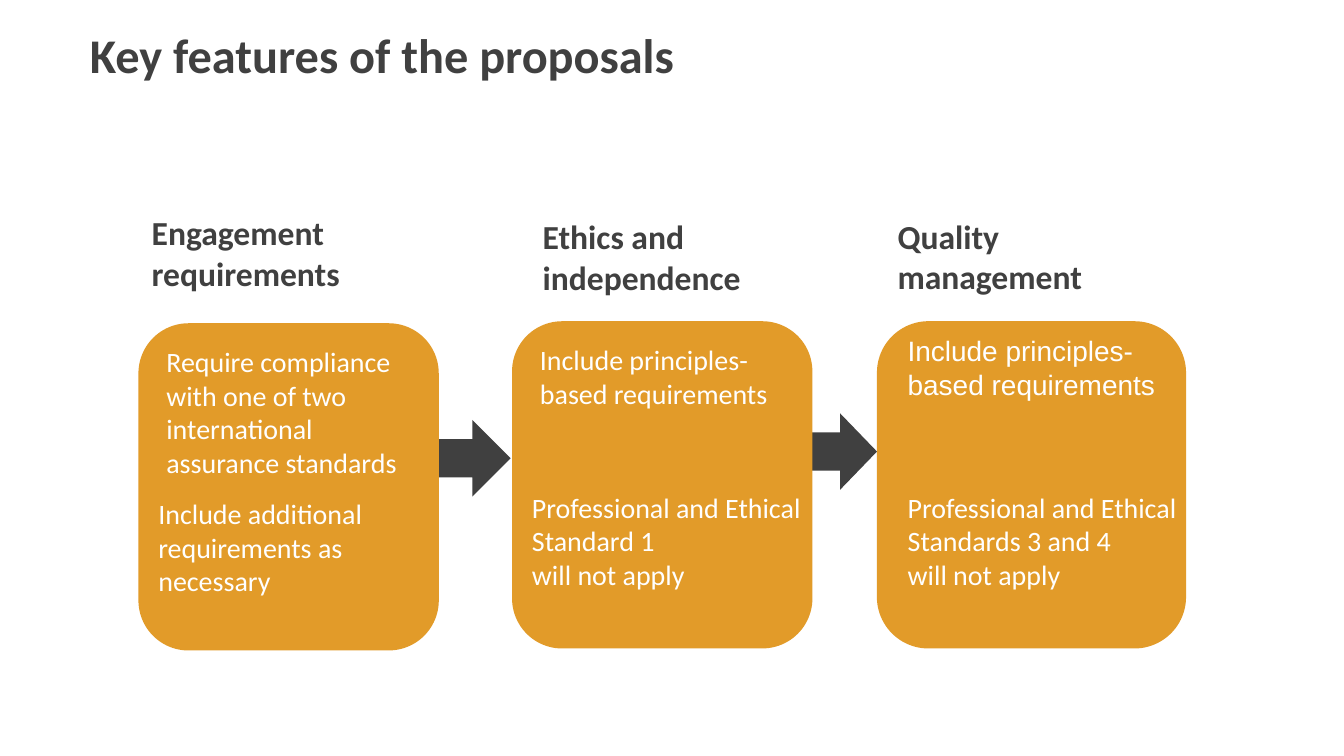
from pptx import Presentation
from pptx.dml.color import RGBColor
from pptx.enum.shapes import MSO_SHAPE as Shape
from pptx.enum.text import MSO_ANCHOR as Anchor, PP_ALIGN as Align
from pptx.util import Emu, Pt

PX = 4572
ORANGE, DARK, WHITE = "E29B29", "404040", "FFFFFF"


def px(*values):
    return [Emu(v * PX) for v in values]


def color(hex_code):
    return RGBColor.from_string(hex_code)


def add_block(slide, kind, box, fill):
    sp = slide.shapes.add_shape(kind, *px(*box))
    sp.shadow.inherit = False
    sp.fill.solid()
    sp.fill.fore_color.rgb = color(fill)
    sp.line.fill.background()
    return sp


def write(sp, text, size=15, hue=WHITE, bold=False, font="Calibri", spacing=None):
    tf = sp.text_frame
    tf.word_wrap = True
    tf.vertical_anchor = Anchor.TOP
    for i, line in enumerate(text.split("\n")):
        p = tf.add_paragraph() if i else tf.paragraphs[0]
        p.alignment = Align.LEFT
        p.line_spacing = spacing
        r = p.add_run()
        r.text = line
        r.font.name, r.font.size, r.font.bold = font, Pt(size), bold
        r.font.color.rgb = color(hue)


def add_text(slide, box, text, **fmt):
    write(slide.shapes.add_textbox(*px(*box)), text, **fmt)


def add_title(slide, box, text):
    add_text(slide, box, text, size=25.9, hue=DARK, bold=True, spacing=0.9)


def add_column(slide, box, heading, heading_box, lead, lead_box, note, note_box, arrow_box):
    left, top, _, _ = box

    def inside(part):
        dx, dy, w, h = part
        return left + dx, top + dy, w, h

    if arrow_box:
        add_block(slide, Shape.RIGHT_ARROW, inside(arrow_box), DARK)
    card = add_block(slide, Shape.ROUNDED_RECTANGLE, box, ORANGE)
    if lead_box:
        add_text(slide, inside(lead_box), lead, font="Arial")
    else:
        write(card, lead)
    add_text(slide, inside(heading_box), heading, size=18, hue=DARK, bold=True)
    add_text(slide, inside(note_box), note)


COLUMNS = [
    dict(box=(206, 481, 447, 487),
         heading="Engagement requirements", heading_box=(0, -175, 504, 142),
         lead="Require compliance with one of two international assurance standards",
         lead_box=None,
         note="Include additional requirements as necessary", note_box=(10, 248, 448, 172),
         arrow_box=(440, 144, 114, 114)),
    dict(box=(762, 478, 447, 487),
         heading="Ethics and independence", heading_box=(26, -166, 434, 142),
         lead="Include principles-based requirements", lead_box=None,
         note="Professional and Ethical Standard 1\nwill not apply",
         note_box=(10, 242, 448, 172),
         arrow_box=(433, 137, 110, 114)),
    dict(box=(1305, 478, 460, 487),
         heading="Quality management", heading_box=(11, -167, 374, 142),
         lead="Include principles-based requirements", lead_box=(26, 9, 460, 122),
         note="Professional and Ethical Standards 3 and 4\nwill not apply",
         note_box=(26, 242, 482, 172),
         arrow_box=None),
]


def main():
    prs = Presentation()
    prs.slide_width, prs.slide_height = px(2000, 1125)
    slide = prs.slides.add_slide(prs.slide_layouts[6])
    add_title(slide, (114, 38, 928, 106), "Key features of the proposals")
    for column in reversed(COLUMNS):
        add_column(slide, **column)
    prs.save("out.pptx")


if __name__ == "__main__":
    main()
